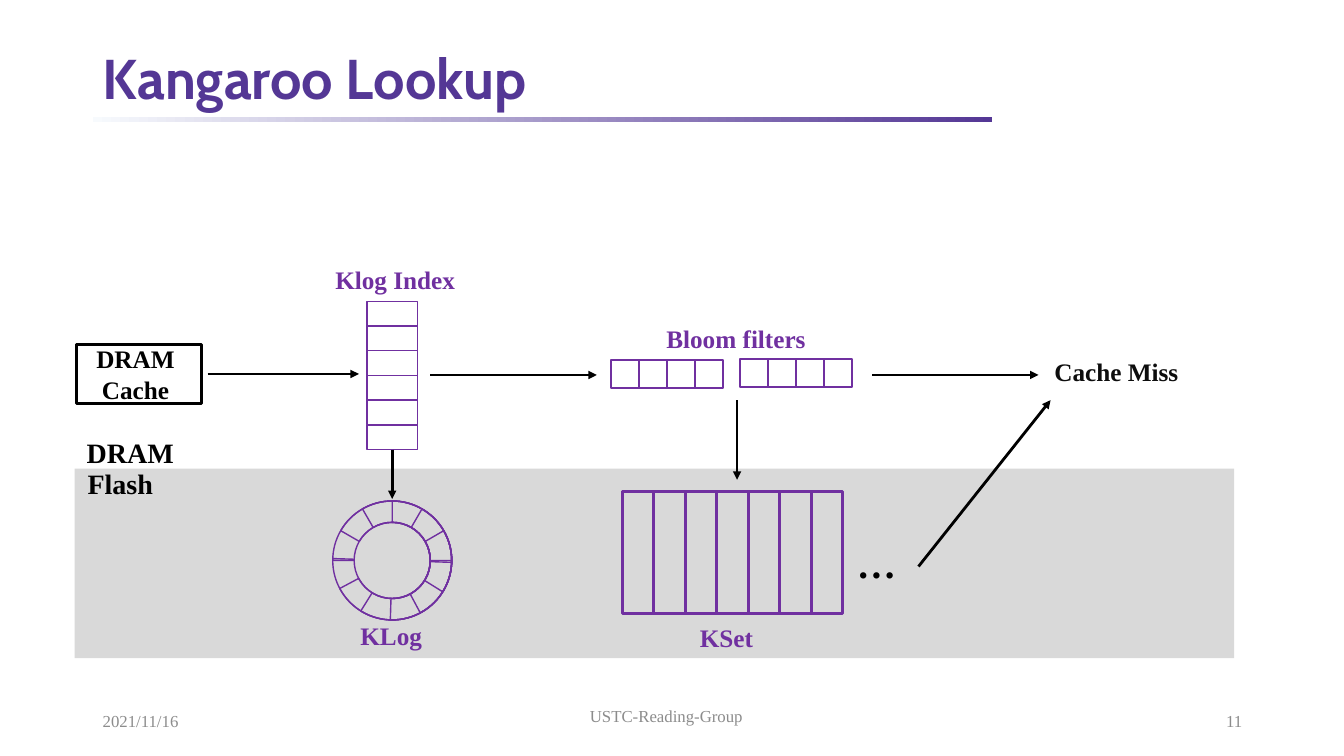
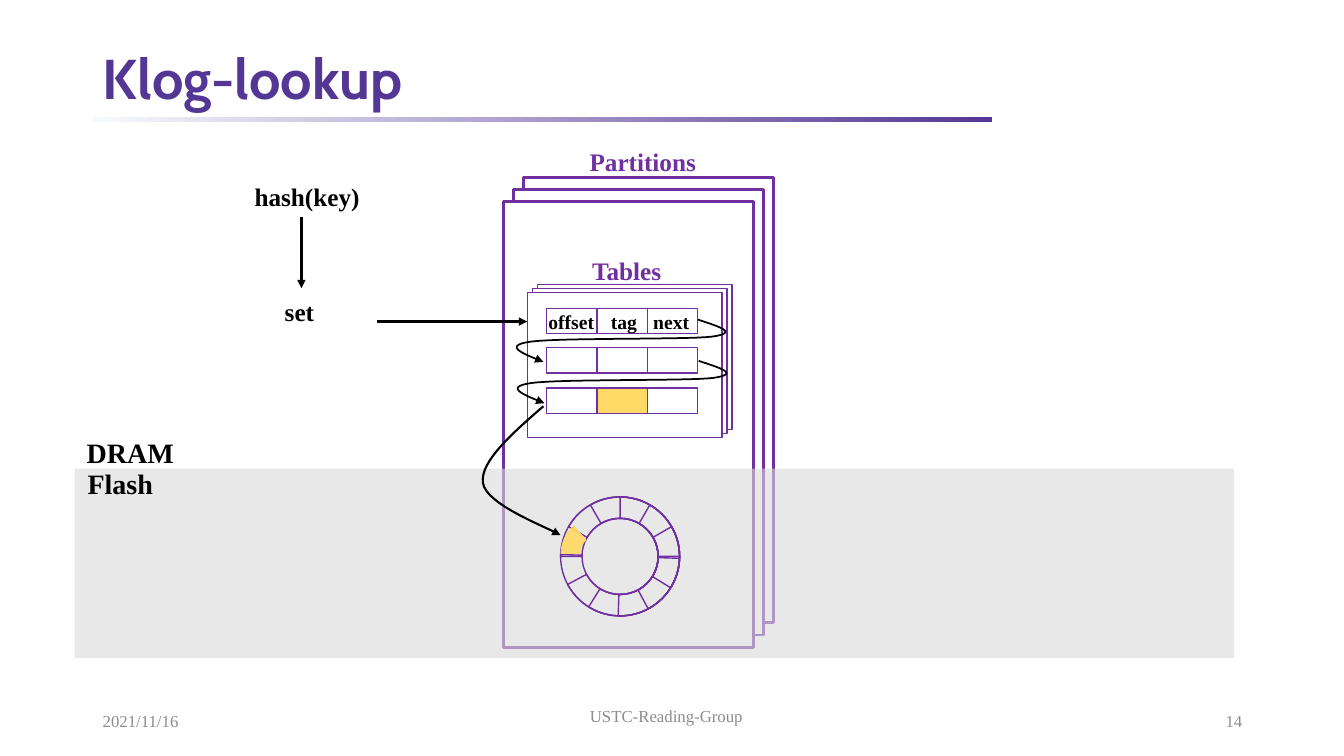
from dataclasses import dataclass

from pptx import Presentation
from pptx.dml.color import RGBColor
from pptx.enum.shapes import MSO_CONNECTOR, MSO_SHAPE
from pptx.enum.text import MSO_ANCHOR, MSO_AUTO_SIZE, PP_ALIGN
from pptx.oxml.ns import qn
from pptx.util import Inches, Pt
from lxml import etree

RECTANGLE = MSO_SHAPE.RECTANGLE
BLOCK_ARC = MSO_SHAPE.BLOCK_ARC
STRAIGHT = MSO_CONNECTOR.STRAIGHT
TOP, MIDDLE = MSO_ANCHOR.TOP, MSO_ANCHOR.MIDDLE
LEFT, CENTER, RIGHT = PP_ALIGN.LEFT, PP_ALIGN.CENTER, PP_ALIGN.RIGHT
FIT_SHAPE, FIXED_SIZE = MSO_AUTO_SIZE.SHAPE_TO_FIT_TEXT, MSO_AUTO_SIZE.NONE
TITLE_ONLY = 5


@dataclass(frozen=True)
class Theme:
    title_font: str = "Cabin"
    body_font: str = "Times New Roman"
    title: str = "543795"
    pale: str = "F7FAFD"
    purple: str = "7030A0"
    black: str = "000000"
    near_black: str = "0D0D0D"
    white: str = "FFFFFF"
    flash: str = "D9D9D9"
    footer: str = "8C8C8C"
    highlight: str = "FFD966"
    title_size: int = 40
    ellipsis_size: int = 28
    zone_size: int = 20
    label_size: int = 18
    field_size: int = 14
    footer_size: int = 12


THEME = Theme()
# Cubic curve from the end of one table entry to the start of the next.
NEXT_CURVE = [
    (6.92, 3.17),
    (7.13, 3.24), (7.34, 3.3), (7.06, 3.34),
    (6.79, 3.37), (5.54, 3.35), (5.26, 3.39),
    (4.98, 3.43), (5.19, 3.51), (5.39, 3.59),
]
LOG_CURVE = [
    (5.39, 4.03),
    (5.08, 4.3), (4.76, 4.58), (4.79, 4.79),
    (4.82, 5.01), (5.43, 5.23), (5.56, 5.31),
]


def rgb(value):
    return RGBColor.from_string(value)


def inches(*values):
    return [Inches(value) for value in values]


def write(frame, text, size=THEME.label_size, color=THEME.black, bold=True,
          font=THEME.body_font, align=LEFT, anchor=TOP, spacing=None):
    frame.vertical_anchor = anchor
    frame.text = text
    for paragraph in frame.paragraphs:
        paragraph.alignment = align
        paragraph.line_spacing = spacing
        paragraph.font.size = Pt(size)
        paragraph.font.name = font
        paragraph.font.bold = bold
        paragraph.font.color.rgb = rgb(color)


def add_text(slide, text, at, wrap=False, **style):
    box = slide.shapes.add_textbox(*inches(*at))
    box.text_frame.word_wrap = wrap
    box.text_frame.auto_size = FIXED_SIZE if wrap else FIT_SHAPE
    write(box.text_frame, text, **style)
    return box


def add_box(slide, at, fill=None, line=None, weight=1, preset=RECTANGLE, opacity=None):
    box = slide.shapes.add_shape(preset, *inches(*at))
    box.shadow.inherit = False
    if fill:
        box.fill.solid()
        box.fill.fore_color.rgb = rgb(fill)
    else:
        box.fill.background()
    if opacity:
        color = box.element.spPr.find(".//" + qn("a:srgbClr"))
        etree.SubElement(color, qn("a:alpha")).set("val", str(opacity * 1000))
    if line:
        box.line.color.rgb = rgb(line)
        box.line.width = Pt(weight)
    else:
        box.line.fill.background()
    return box


def add_cells(slide, at, columns=1, rows=1, weight=1, marked=None):
    """Split an area into equal outlined cells; marked is the filled column."""
    left, top, width, height = at
    cell_width, cell_height = width / columns, height / rows
    for row in range(rows):
        for column in range(columns):
            cell = (left + column * cell_width, top + row * cell_height,
                    cell_width, cell_height)
            fill = THEME.highlight if column == marked else None
            add_box(slide, cell, fill, THEME.purple, weight)


def add_stack(slide, at, step, weight):
    """Three overlapping sheets, from back to front."""
    left, top, width, height = at
    for level in range(3):
        sheet = (left + level * step[0], top + level * step[1], width, height)
        add_box(slide, sheet, THEME.white, THEME.purple, weight)


def add_arc(slide, at, end, thickness, **style):
    arc = add_box(slide, at, preset=BLOCK_ARC, **style)
    for index, value in enumerate((108, end, thickness)):
        arc.adjustments[index] = value
    return arc


def add_ring(slide, left, top, size=1.18):
    """Twelve log segments, outlined by half rings turned in steps of 30 degrees."""
    for angle in range(0, 181, 30):
        half = add_arc(slide, (left, top, size, size), 1.11, 0.18, line=THEME.purple)
        half.rotation = angle


def style_arrow(arrow, weight):
    arrow.line.color.rgb = rgb(THEME.black)
    arrow.line.width = Pt(weight)
    outline = arrow.element.spPr.find(qn("a:ln"))
    etree.SubElement(outline, qn("a:tailEnd")).set("type", "triangle")


def add_arrow(slide, start, end, weight=2):
    arrow = slide.shapes.add_connector(STRAIGHT, *inches(*start, *end))
    style_arrow(arrow, weight)
    etree.SubElement(arrow.element.spPr, qn("a:effectLst"))


def curve_points(controls, steps=16):
    """Sample a chain of cubic Bezier curves."""
    points = [controls[0]]
    for first in range(0, len(controls) - 1, 3):
        a, b, c, d = controls[first:first + 4]
        for step in range(1, steps + 1):
            t = step / steps
            u = 1 - t
            points.append(tuple(
                u**3 * a[axis] + 3 * u * u * t * b[axis]
                + 3 * u * t * t * c[axis] + t**3 * d[axis]
                for axis in (0, 1)))
    return points


def add_curved_arrow(slide, controls, weight, shift=(0, 0)):
    points = [inches(x + shift[0], y + shift[1]) for x, y in curve_points(controls)]
    builder = slide.shapes.build_freeform(*points[0], scale=1.0)
    builder.add_line_segments(points[1:], close=False)
    arrow = builder.convert_to_shape()
    arrow.shadow.inherit = False
    arrow.fill.background()
    style_arrow(arrow, weight)


def add_title_rule(slide, layout):
    """Draw the gradient rule and move it to the layout that the slides share."""
    rule = add_box(slide, (0.92, 1.16, 8.92, 0.05))
    rule.fill.gradient()
    rule.fill.gradient_angle = 0
    for stop, color in zip(rule.fill.gradient_stops, (THEME.pale, THEME.title)):
        stop.color.rgb = rgb(color)
    layout.shapes.element.append(rule.element)


def set_layout_title(layout):
    title = layout.placeholders[0]
    title.left, title.top, title.width, title.height = inches(0.92, 0.43, 11.5, 0.75)


def add_slide(deck, layout, title, number):
    slide = deck.slides.add_slide(layout)
    frame = slide.shapes.title.text_frame
    frame.auto_size = FIXED_SIZE
    write(frame, title, size=THEME.title_size, color=THEME.title,
          font=THEME.title_font, anchor=MIDDLE, spacing=0.9)
    footers = [
        ("2021/11/16", (0.92, 6.95, 3, 0.4), LEFT),
        ("USTC-Reading-Group", (4.36, 6.9, 4.5, 0.4), CENTER),
        (number, (9.42, 6.95, 3, 0.4), RIGHT),
    ]
    for text, at, align in footers:
        add_text(slide, text, at, wrap=True, size=THEME.footer_size,
                 color=THEME.footer, bold=False, align=align, anchor=MIDDLE)
    return slide


def add_memory_zones(slide, opacity=None):
    add_box(slide, (0.74, 4.65, 11.5, 1.88), THEME.flash, opacity=opacity)
    add_text(slide, "DRAM", (0.76, 4.27, 1.08, 0.44), size=THEME.zone_size)
    add_text(slide, "Flash", (0.77, 4.58, 0.86, 0.44), size=THEME.zone_size)


def add_purple_labels(slide, labels):
    for text, at in labels:
        add_text(slide, text, at, color=THEME.purple, align=CENTER)


def draw_kangaroo_lookup(slide):
    add_memory_zones(slide)

    cache = add_text(slide, "DRAM\nCache", (0.76, 3.42, 1.24, 0.58), wrap=True,
                     align=CENTER, anchor=MIDDLE)
    cache.line.color.rgb = rgb(THEME.black)
    cache.line.width = Pt(2)
    frame = cache.text_frame
    frame.margin_top = frame.margin_bottom = 0
    frame.margin_right = Inches(0.17)

    add_cells(slide, (3.64, 2.99, 0.5, 1.47), rows=6)
    add_ring(slide, 3.3, 4.97)
    add_cells(slide, (6.06, 3.57, 1.11, 0.28), columns=4, weight=1.25)
    add_cells(slide, (7.34, 3.56, 1.11, 0.28), columns=4, weight=1.25)
    add_cells(slide, (6.17, 4.88, 2.19, 1.21), columns=7, weight=2)

    add_purple_labels(slide, [
        ("Klog Index", (3.22, 2.57, 1.4, 0.4)),
        ("Bloom filters", (6.5, 3.16, 1.6, 0.4)),
        ("KLog", (3.47, 6.11, 0.82, 0.4)),
        ("KSet", (6.84, 6.12, 0.73, 0.4)),
    ])
    add_text(slide, "…", (8.4, 5.3, 0.59, 0.53), size=THEME.ellipsis_size)
    add_text(slide, "Cache Miss", (10.36, 3.49, 1.44, 0.4), wrap=True,
             color=THEME.near_black)

    for start, end in [
        ((2.06, 3.71), (3.56, 3.71)),
        ((3.89, 4.46), (3.89, 4.95)),
        ((4.27, 3.72), (5.92, 3.72)),
        ((7.31, 3.97), (7.31, 4.76)),
        ((8.65, 3.72), (10.3, 3.72)),
        ((9.11, 5.62), (10.42, 3.97)),
    ]:
        add_arrow(slide, start, end)


def draw_klog_lookup(slide):
    add_stack(slide, (5.19, 1.76, 2.48, 4.42), step=(-0.1, 0.12), weight=2)
    add_memory_zones(slide, opacity=60)
    add_stack(slide, (5.33, 2.82, 1.93, 1.44), step=(-0.05, 0.04), weight=1)
    for top, marked in ((3.06, None), (3.45, None), (3.85, 1)):
        add_cells(slide, (5.42, top, 1.5, 0.25), columns=3, marked=marked)
    for field, left, width in (("offset", 5.34, 0.66), ("tag", 5.96, 0.46),
                               ("next", 6.38, 0.56)):
        add_text(slide, field, (left, 3.03, width, 0.34), size=THEME.field_size)

    add_purple_labels(slide, [
        ("Partitions", (5.74, 1.4, 1.27, 0.4)),
        ("Tables", (5.77, 2.48, 0.89, 0.4)),
    ])
    add_text(slide, "hash(key)", (2.42, 1.75, 1.25, 0.4), align=CENTER)
    add_text(slide, "set", (2.72, 2.89, 0.5, 0.4), align=CENTER)

    add_arrow(slide, (2.99, 2.15), (2.99, 2.86))
    add_arrow(slide, (3.74, 3.19), (5.23, 3.19))
    add_curved_arrow(slide, NEXT_CURVE, 1.25)
    add_curved_arrow(slide, NEXT_CURVE, 1.25, shift=(0.01, 0.41))

    add_ring(slide, 5.56, 4.93)
    add_curved_arrow(slide, LOG_CURVE, 1.5)
    add_arc(slide, (5.56, 5.12, 0.75, 0.75), 137.7, 0.26,
            fill=THEME.highlight, opacity=92)


def main():
    deck = Presentation()
    deck.slide_width, deck.slide_height = inches(13.33, 7.5)
    layout = deck.slide_layouts[TITLE_ONLY]
    set_layout_title(layout)

    overview = add_slide(deck, layout, "Kangaroo Lookup", "11")
    add_title_rule(overview, layout)
    draw_kangaroo_lookup(overview)
    draw_klog_lookup(add_slide(deck, layout, "Klog-lookup", "14"))
    deck.save("out.pptx")


if __name__ == "__main__":
    main()
